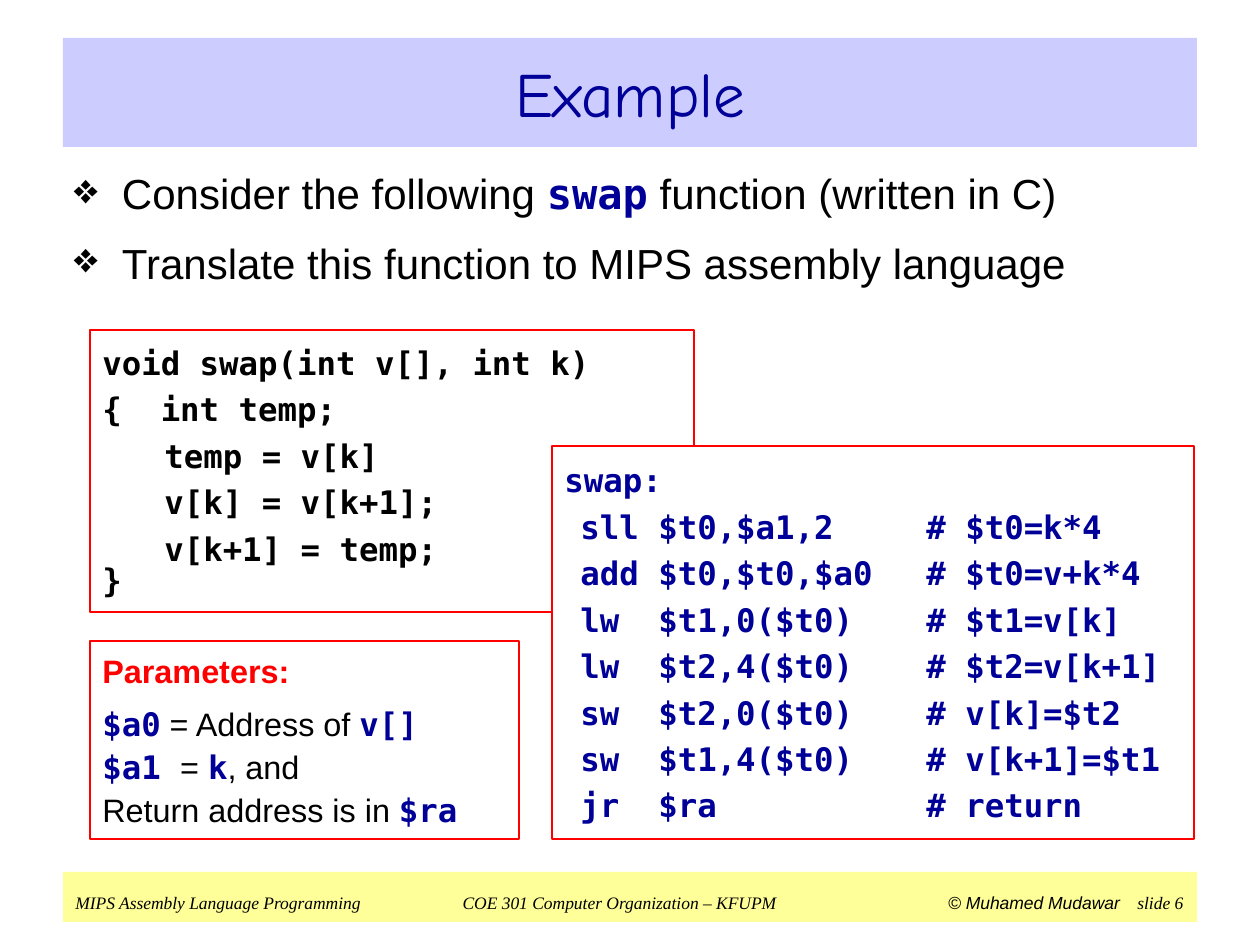
from dataclasses import dataclass

from lxml import etree
from pptx import Presentation
from pptx.dml.color import RGBColor
from pptx.enum.shapes import MSO_SHAPE
from pptx.enum.text import MSO_ANCHOR, PP_ALIGN
from pptx.oxml.ns import qn
from pptx.util import Pt

RECTANGLE = MSO_SHAPE.RECTANGLE
TOP, MIDDLE = MSO_ANCHOR.TOP, MSO_ANCHOR.MIDDLE
LEFT, CENTER = PP_ALIGN.LEFT, PP_ALIGN.CENTER
PX_PER_INCH = 126


@dataclass(frozen=True)
class TextStyle:
    font: str
    size: float
    color: str
    bold: bool = False
    italic: bool = False


class Theme:
    white = "FFFFFF"
    red = "FF0000"
    black = "000000"
    navy = "000099"
    title_fill = "CCCCFF"
    footer_fill = "FFFF99"
    border = 1.5

    title = TextStyle("Comic Neue", 36, navy)
    body = TextStyle("Arial", 24, black)
    body_code = TextStyle("DejaVu Sans Mono", 24, navy, bold=True)
    c_code = TextStyle("DejaVu Sans Mono", 18.5, black, bold=True)
    mips_code = TextStyle("DejaVu Sans Mono", 18.5, navy, bold=True)
    heading = TextStyle("Arial", 18.5, red, bold=True)
    note = TextStyle("Arial", 18.5, black)
    footer = TextStyle("Times New Roman", 10, black, italic=True)
    author = TextStyle("Arial", 10, black, italic=True)
    footer_gap = TextStyle("Arial", 18, black)


def emu(px):
    return round(px * 914400 / PX_PER_INCH)


def apply_style(font, style):
    font.name = style.font
    font.size = Pt(style.size)
    font.bold = style.bold
    font.italic = style.italic
    font.color.rgb = RGBColor.from_string(style.color)


class SlideBuilder:
    def __init__(self, slide, theme):
        self.slide = slide
        self.theme = theme

    def rectangle(self, place, fill=None, line=None, anchor=TOP):
        box = self.slide.shapes.add_shape(RECTANGLE, *map(emu, place))
        box.shadow.inherit = False
        if fill:
            box.fill.solid()
            box.fill.fore_color.rgb = RGBColor.from_string(fill)
        else:
            box.fill.background()
        if line:
            box.line.color.rgb = RGBColor.from_string(line)
            box.line.width = Pt(self.theme.border)
        else:
            box.line.fill.background()
        box.text_frame.word_wrap = True
        box.text_frame.vertical_anchor = anchor
        return box.text_frame

    def text_box(self, place, side_inset, end_inset):
        frame = self.slide.shapes.add_textbox(*map(emu, place)).text_frame
        frame.word_wrap = True
        frame.margin_left = frame.margin_right = emu(side_inset)
        frame.margin_top = frame.margin_bottom = emu(end_inset)
        return frame

    def paragraph(self, frame, spans, before=0, spacing=None, align=LEFT,
                  tabs=(), bullet=None, indent=0):
        """Add one paragraph; spans are (text, style), tabs (px, alignment)."""
        first = frame.paragraphs[0]
        para = frame.add_paragraph() if first.runs else first
        para.alignment = align
        properties = para._p.get_or_add_pPr()
        if bullet:
            properties.set("marL", str(emu(indent)))
            properties.set("indent", str(-emu(indent)))
            etree.SubElement(properties, qn("a:buChar"), char=bullet)
        if tabs:
            tab_list = etree.SubElement(properties, qn("a:tabLst"))
            for position, alignment in tabs:
                etree.SubElement(tab_list, qn("a:tab"),
                                 pos=str(emu(position)), algn=alignment)
        para.space_before = Pt(before)
        if spacing:
            para.line_spacing = spacing
        styles = {style for _, style in spans}
        if len(styles) == 1:
            apply_style(para.font, spans[0][1])
        for text, style in spans:
            span = para.add_run()
            span.text = text
            if len(styles) > 1:
                apply_style(span.font, style)

    def code(self, frame, lines, style, tabs):
        for number, line in enumerate(lines):
            closing = line == "}"
            self.paragraph(frame, [(line, style)], tabs=tabs,
                           before=4.3 if number and not closing else 0,
                           spacing=0.8 if closing else None)


def main():
    theme = Theme()
    deck = Presentation()
    deck.slide_width, deck.slide_height = emu(1260), emu(945)
    page = SlideBuilder(deck.slides.add_slide(deck.slide_layouts[6]), theme)

    footer = page.rectangle((63, 872, 1134, 50), fill=theme.footer_fill)
    page.paragraph(footer, [
        ("MIPS Assembly Language Programming\t"
         "COE 301 Computer Organization – KFUPM\t", theme.footer),
        ("© Muhamed Mudawar", theme.author),
        ("  ", theme.footer_gap),
        ("slide 6", theme.footer),
    ], tabs=[(544, "ctr"), (1108, "r")])

    parameters = page.rectangle((90, 641, 429, 198), line=theme.red)
    note, code = theme.note, theme.mips_code
    parameter_lines = [
        [("Parameters:", theme.heading)],
        [("$a0", code), (" = Address of ", note), ("v[]", code)],
        [("$a1 ", code), ("= ", note), ("k", code), (", and", note)],
        [("Return address is in ", note), ("$ra", code)],
    ]
    for number, spans in enumerate(parameter_lines):
        page.paragraph(parameters, spans, spacing=1.1,
                       before=6 if number == 1 else 0)

    body = page.text_box((63, 163, 1134, 149), side_inset=11, end_inset=5)
    tasks = [
        [("Consider the following ", theme.body), ("swap", theme.body_code),
         (" function (written in C)", theme.body)],
        [("Translate this function to MIPS assembly language", theme.body)],
    ]
    for number, spans in enumerate(tasks):
        page.paragraph(body, spans, before=11 if number else 0,
                       bullet="❖", indent=48)

    c_box = page.rectangle((90, 330, 604, 282), line=theme.red, anchor=MIDDLE)
    page.code(c_box, [
        "void swap(int v[], int k)",
        "{  int temp;",
        "\ttemp = v[k]",
        "\tv[k] = v[k+1];",
        "\tv[k+1] = temp;",
        "}",
    ], theme.c_code, tabs=[(62, "l")])

    mips_box = page.rectangle((552, 446, 642, 393), fill=theme.white,
                              line=theme.red, anchor=MIDDLE)
    page.code(mips_box, [
        "swap:",
        "\tsll $t0,$a1,2\t# $t0=k*4",
        "\tadd $t0,$t0,$a0\t# $t0=v+k*4",
        "\tlw  $t1,0($t0)\t# $t1=v[k]",
        "\tlw  $t2,4($t0)\t# $t2=v[k+1]",
        "\tsw  $t2,0($t0)\t# v[k]=$t2",
        "\tsw  $t1,4($t0)\t# v[k+1]=$t1",
        "\tjr  $ra\t# return",
    ], theme.mips_code, tabs=[(16, "l"), (362, "l")])

    title = page.rectangle((63, 38, 1134, 109), fill=theme.title_fill,
                           anchor=MIDDLE)
    page.paragraph(title, [("Example", theme.title)], align=CENTER)

    deck.save("out.pptx")


if __name__ == "__main__":
    main()
